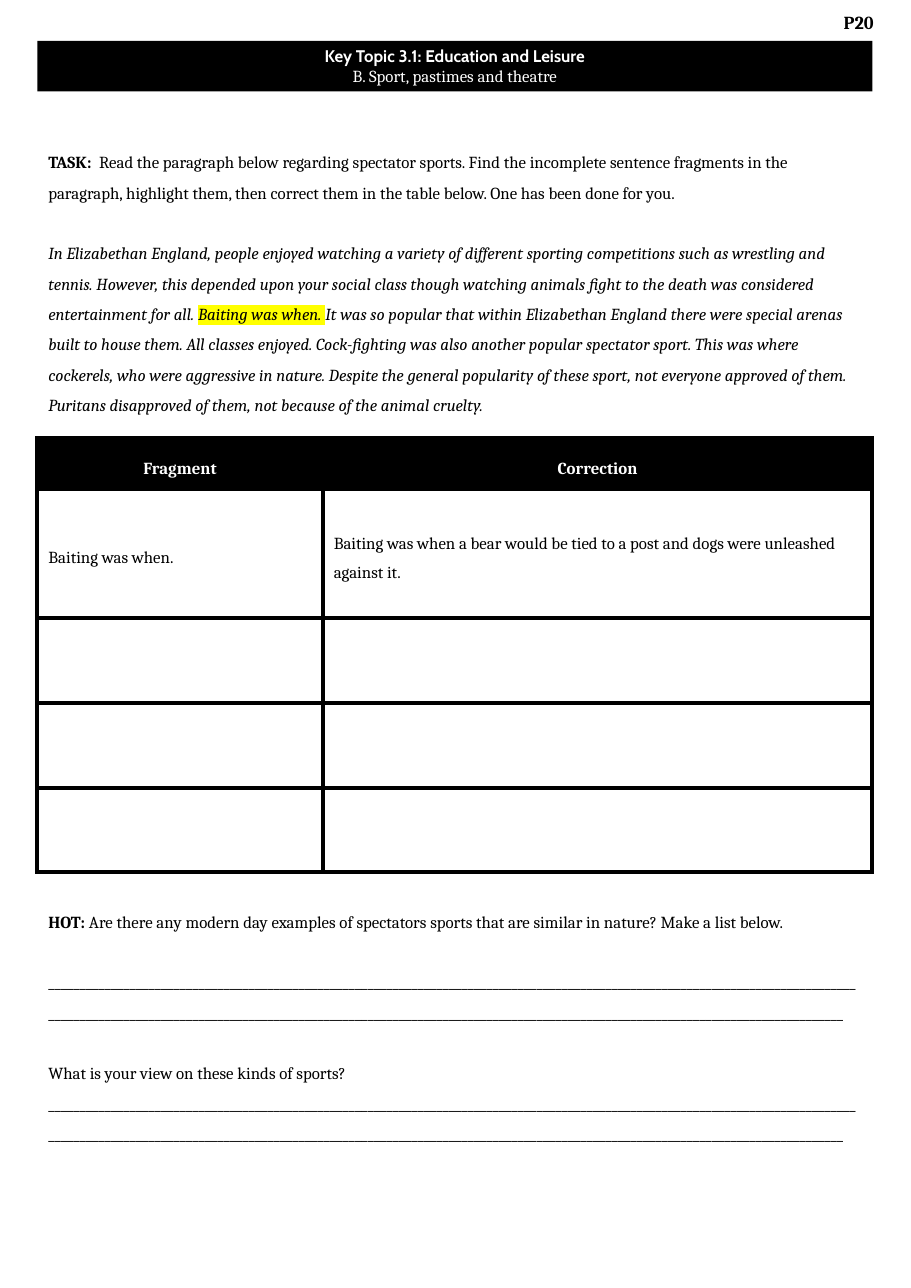
from dataclasses import dataclass

from lxml import etree
from pptx import Presentation
from pptx.dml.color import RGBColor
from pptx.enum.text import MSO_ANCHOR, MSO_AUTO_SIZE, PP_ALIGN
from pptx.oxml.ns import qn
from pptx.util import Inches, Pt

CENTER = PP_ALIGN.CENTER
MIDDLE = MSO_ANCHOR.MIDDLE
NO_AUTOSIZE = MSO_AUTO_SIZE.NONE


@dataclass(frozen=True)
class Theme:
    ink: str = "000000"
    paper: str = "FFFFFF"
    marker: str = "FFFF00"
    serif: str = "Cambria"
    sans: str = "Cabin"
    body_size: float = 11
    page_size: float = 12
    line_spacing: float = 1.5
    section_gap: float = 19.8
    border: float = 3


THEME = Theme()
PAGE_WIDTH, PAGE_HEIGHT = 8.27, 11.69
MARGIN, CONTENT_WIDTH = 0.34, 7.58
FRAGMENT_WIDTH = 2.59
ROW_HEIGHTS = [0.46, 1.17] + [0.77] * 3
ANSWER_LINES = "_" * 256

TASK = [
    ("TASK:  ", "bold"),
    ("Read the paragraph below regarding spectator sports. Find the incomplete sentence "
     "fragments in the paragraph, highlight them, then correct them in the table below. "
     "One has been done for you.", ""),
]
PASSAGE = [
    ("In Elizabethan England, people enjoyed watching a variety of different sporting "
     "competitions such as wrestling and tennis. However, this depended upon your social "
     "class though watching animals fight to the death was considered entertainment for "
     "all. ", "italic"),
    ("Baiting was when. ", "italic marked"),
    ("It was so popular that within Elizabethan England there were special arenas built to "
     "house them. All classes enjoyed. Cock-fighting was also another popular spectator "
     "sport. This was where cockerels, who were aggressive in nature. Despite the general "
     "popularity of these sport, not everyone approved of them. Puritans disapproved of "
     "them, not because of the animal cruelty.", "italic"),
]
HOT = [
    ("HOT: ", "bold"),
    ("Are there any modern day examples of spectators sports that are similar in nature? "
     "Make a list below.", ""),
]
VIEW = [("What is your view on these kinds of sports?", "")]
ANSWER = [(ANSWER_LINES, "")]
TABLE_TEXT = [
    ("Fragment", "Correction"),
    ("Baiting was when.",
     "Baiting was when a bear would be tied to a post and dogs were unleashed against it."),
]


def style(para, color=THEME.ink, face=THEME.serif, size=THEME.body_size, bold=False):
    font = para.font
    font.name, font.size, font.bold = face, Pt(size), bold
    font.color.rgb = RGBColor.from_string(color)


def place(shape, box):
    shape.left, shape.top, shape.width, shape.height = map(Inches, box)


def highlight(span):
    properties = span.font._element
    marker = etree.Element(qn("a:highlight"))
    etree.SubElement(marker, qn("a:srgbClr"), val=THEME.marker)
    properties.insert(0, marker)


def add_page_number(page, box):
    frame = page.shapes.add_textbox(*map(Inches, box)).text_frame
    frame.word_wrap = True
    frame.margin_top = frame.margin_bottom = Inches(0.1)
    para = frame.paragraphs[0]
    para.text, para.alignment = "P20", CENTER
    style(para, size=THEME.page_size, bold=True)


def add_banner(page, box):
    banner = page.shapes.title
    place(banner, box)
    banner.fill.solid()
    banner.fill.fore_color.rgb = RGBColor.from_string(THEME.ink)
    frame = banner.text_frame
    frame.auto_size, frame.vertical_anchor = NO_AUTOSIZE, MIDDLE
    frame.margin_top = frame.margin_bottom = Inches(0.1)
    frame.text = "Key Topic 3.1: Education and Leisure\nB. Sport, pastimes and theatre"
    topic, subtopic = frame.paragraphs
    topic.alignment = subtopic.alignment = CENTER
    style(topic, THEME.paper, THEME.sans, bold=True)
    style(subtopic, THEME.paper)


def add_worksheet_text(page, box, entries):
    """Each entry is (spans, whether a one-line gap goes above it)."""
    frame = page.shapes.add_textbox(*map(Inches, box)).text_frame
    frame.word_wrap = True
    for index, (spans, gap_above) in enumerate(entries):
        para = frame.add_paragraph() if index else frame.paragraphs[0]
        para.line_spacing = THEME.line_spacing
        if gap_above:
            para.space_before = Pt(THEME.section_gap)
        style(para)
        for text, marks in spans:
            span = para.add_run()
            span.text = text
            if "bold" in marks:
                span.font.bold = True
            if "italic" in marks:
                span.font.italic = True
            if "marked" in marks:
                highlight(span)


def add_borders(cell):
    properties = cell._tc.get_or_add_tcPr()
    for index, side in enumerate(("lnL", "lnR", "lnT", "lnB")):
        line = etree.Element(qn(f"a:{side}"), w=str(Pt(THEME.border)))
        fill = etree.SubElement(line, qn("a:solidFill"))
        etree.SubElement(fill, qn("a:srgbClr"), val=THEME.ink)
        properties.insert(index, line)


def add_correction_table(page, box):
    table = page.shapes.add_table(len(ROW_HEIGHTS), 2, *map(Inches, box)).table
    table.first_row = table.horz_banding = False
    for column, width in zip(table.columns, (FRAGMENT_WIDTH, box[2] - FRAGMENT_WIDTH)):
        column.width = Inches(width)
    for row, height in zip(table.rows, ROW_HEIGHTS):
        row.height = Inches(height)
    for cell in table.iter_cells():
        cell.fill.background()
        cell.vertical_anchor = MIDDLE
        add_borders(cell)
    for row_index, texts in enumerate(TABLE_TEXT):
        is_header = row_index == 0
        for column_index, text in enumerate(texts):
            cell = table.cell(row_index, column_index)
            para = cell.text_frame.paragraphs[0]
            para.text, para.line_spacing = text, THEME.line_spacing
            style(para, THEME.paper if is_header else THEME.ink, bold=is_header)
            if is_header:
                para.alignment = CENTER
                cell.fill.solid()
                cell.fill.fore_color.rgb = RGBColor.from_string(THEME.ink)


def main():
    deck = Presentation()
    deck.slide_width, deck.slide_height = Inches(PAGE_WIDTH), Inches(PAGE_HEIGHT)
    page = deck.slides.add_slide(deck.slide_layouts.get_by_name("Title Only"))

    def band(top, height):
        return MARGIN, top, CONTENT_WIDTH, height

    add_page_number(page, (7.49, 0, 0.61, 0.89))
    add_banner(page, band(0.37, 0.46))
    add_worksheet_text(page, band(1.24, 2.57), [(TASK, False), (PASSAGE, True)])
    add_correction_table(page, band(3.98, sum(ROW_HEIGHTS)))
    add_worksheet_text(page, band(8.13, 2.29), [
        (HOT, False), (ANSWER, True), (VIEW, True), (ANSWER, False)])
    deck.save("out.pptx")


if __name__ == "__main__":
    main()
